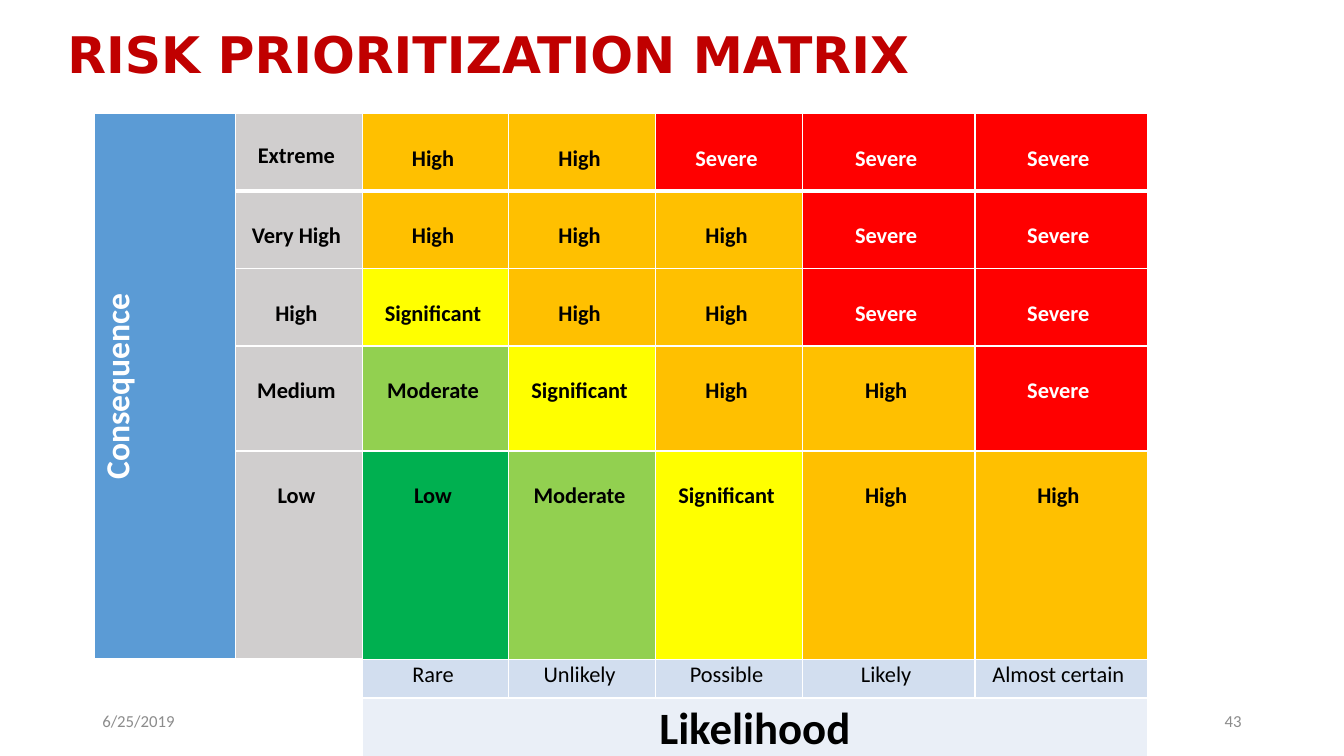
"""Build the risk prioritization matrix slide."""
from lxml.etree import SubElement
from pptx import Presentation
from pptx.dml.color import RGBColor
from pptx.enum.text import MSO_ANCHOR as Anchor, PP_ALIGN as Align
from pptx.oxml.ns import qn
from pptx.util import Pt

COLORS = {
    "title": "C00000", "footer": "8C8C8C", "black": "000000", "white": "FFFFFF",
    "consequence": "5B9BD5", "level": "D0CECE",
    "likelihood": "D2DEEF", "likelihood_title": "EAEFF7",
    "Low": "00B050", "Moderate": "92D050", "Significant": "FFFF00",
    "High": "FFC000", "Severe": "FF0000",
}
LEVELS = ["Extreme", "Very High", "High", "Medium", "Low"]
LIKELIHOODS = ["Rare", "Unlikely", "Possible", "Likely", "Almost certain"]
RATINGS = [
    ["High", "High", "Severe", "Severe", "Severe"],
    ["High", "High", "High", "Severe", "Severe"],
    ["Significant", "High", "High", "Severe", "Severe"],
    ["Moderate", "Significant", "High", "High", "Severe"],
    ["Low", "Moderate", "Significant", "High", "High"],
]
COLUMN_WIDTHS = [100.8, 90.7, 104.4, 105, 105, 123, 123]
ROW_HEIGHTS = [55.4, 55.4, 55.4, 75, 149, 27.4, 42]


def style_text(paragraph, size, color, bold=False, align=Align.LEFT, font_name="Calibri"):
    """Set the font and alignment of a paragraph."""
    paragraph.alignment = align
    font = paragraph.font
    font.name, font.size, font.bold = font_name, Pt(size), bold
    font.color.rgb = RGBColor.from_string(COLORS[color])


def add_label(slide, text, box, anchor, **style):
    """Add a one-line text box."""
    frame = slide.shapes.add_textbox(*map(Pt, box)).text_frame
    frame.word_wrap = True
    frame.vertical_anchor = anchor
    frame.text = text
    style_text(frame.paragraphs[0], **style)


def set_borders(cell, bottom_width):
    """Draw white borders round a cell."""
    properties = cell._tc.get_or_add_tcPr()
    widths = {"a:lnL": 1, "a:lnR": 1, "a:lnT": 1, "a:lnB": bottom_width}
    for position, (side, width) in enumerate(widths.items()):
        line = SubElement(properties, qn(side), w=str(Pt(width)))
        fill = SubElement(line, qn("a:solidFill"))
        SubElement(fill, qn("a:srgbClr"), val=COLORS["white"])
        properties.insert(position, line)


def fill_cell(cell, text, fill, size=16, color="black", bold=True, top=0, right=9):
    """Fill a cell and write its centred text."""
    cell.fill.solid()
    cell.fill.fore_color.rgb = RGBColor.from_string(COLORS[fill])
    cell.margin_left, cell.margin_right = Pt(5), Pt(right)
    cell.margin_top, cell.margin_bottom = Pt(top), Pt(0)
    cell.text = text
    paragraph = cell.text_frame.paragraphs[0]
    paragraph.line_spacing = 1.07
    style_text(paragraph, size, color, bold, Align.CENTER)


def add_matrix(slide):
    """Add the table of consequence against likelihood."""
    matrix = slide.shapes.add_table(
        len(ROW_HEIGHTS), len(COLUMN_WIDTHS), Pt(67.6), Pt(81),
        Pt(sum(COLUMN_WIDTHS)), Pt(sum(ROW_HEIGHTS))).table
    matrix.first_row = matrix.horz_banding = False
    for column, width in zip(matrix.columns, COLUMN_WIDTHS):
        column.width = Pt(width)
    for index, (row, height) in enumerate(zip(matrix.rows, ROW_HEIGHTS)):
        row.height = Pt(height)
        for cell in row.cells:
            set_borders(cell, 3 if index == 0 else 1)

    consequence, corner, likelihood = matrix.cell(0, 0), matrix.cell(5, 0), matrix.cell(6, 2)
    consequence.merge(matrix.cell(4, 0))
    corner.merge(matrix.cell(6, 1))
    likelihood.merge(matrix.cell(6, 6))
    fill_cell(consequence, "Consequence", "consequence", size=24, color="white", right=5)
    consequence._tc.get_or_add_tcPr().set("vert", "vert270")
    fill_cell(corner, "", "white")
    fill_cell(likelihood, "Likelihood", "likelihood_title", size=32, right=5)

    for row, (level, ratings) in enumerate(zip(LEVELS, RATINGS)):
        fill_cell(matrix.cell(row, 1), level, "level", top=19.5 if row == 0 else 21)
        for column, rating in enumerate(ratings, 2):
            color = "white" if rating == "Severe" else "black"
            fill_cell(matrix.cell(row, column), rating, rating, color=color, top=21)
    for column, name in enumerate(LIKELIHOODS, 2):
        fill_cell(matrix.cell(5, column), name, "likelihood", bold=False)


def main():
    """Build and save the slide."""
    deck = Presentation()
    deck.slide_width, deck.slide_height = Pt(960), Pt(540)
    slide = deck.slides.add_slide(deck.slide_layouts[6])
    add_label(slide, "RISK PRIORITIZATION MATRIX", (41, 13, 877.7, 322.6), Anchor.TOP,
              size=36, color="title", bold=True, font_name="DejaVu Sans")
    add_matrix(slide)
    add_label(slide, "6/25/2019", (66, 500.5, 216, 28.8), Anchor.MIDDLE,
              size=12, color="footer")
    add_label(slide, "43", (678, 500.5, 216, 28.8), Anchor.MIDDLE,
              size=12, color="footer", align=Align.RIGHT)
    deck.save("out.pptx")


if __name__ == "__main__":
    main()
